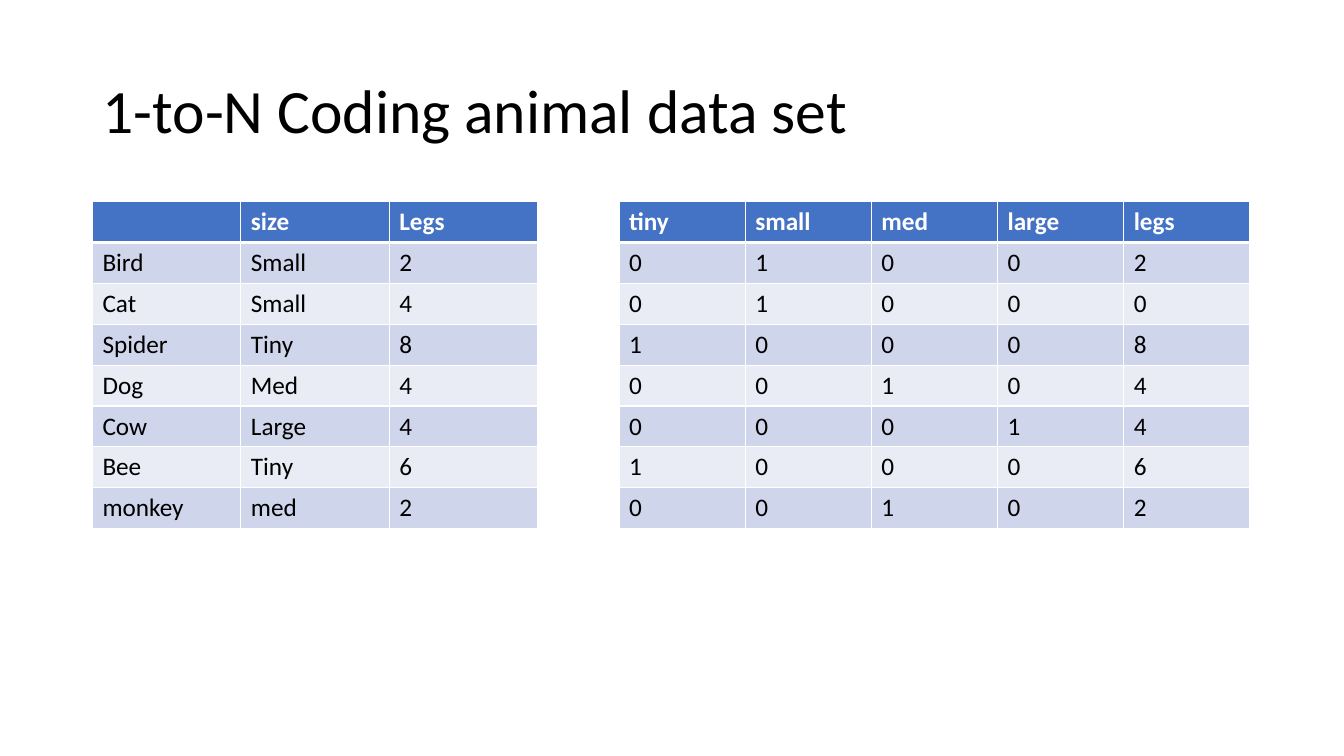
"""Build a slide that shows 1-to-N coding of an animal data set."""
from dataclasses import dataclass

from lxml import etree
from pptx import Presentation
from pptx.dml.color import RGBColor
from pptx.enum.text import MSO_ANCHOR, MSO_AUTO_SIZE, PP_ALIGN
from pptx.oxml.ns import qn
from pptx.util import Cm, Pt

LEFT = PP_ALIGN.LEFT
MIDDLE = MSO_ANCHOR.MIDDLE
NO_AUTOFIT = MSO_AUTO_SIZE.NONE
TITLE_ONLY = 5

ANIMALS = [
    ["", "size", "Legs"],
    ["Bird", "Small", "2"],
    ["Cat", "Small", "4"],
    ["Spider", "Tiny", "8"],
    ["Dog", "Med", "4"],
    ["Cow", "Large", "4"],
    ["Bee", "Tiny", "6"],
    ["monkey", "med", "2"],
]
CODED_ANIMALS = [
    ["tiny", "small", "med", "large", "legs"],
    ["0", "1", "0", "0", "2"],
    ["0", "1", "0", "0", "0"],
    ["1", "0", "0", "0", "8"],
    ["0", "0", "1", "0", "4"],
    ["0", "0", "0", "1", "4"],
    ["1", "0", "0", "0", "6"],
    ["0", "0", "1", "0", "2"],
]


@dataclass(frozen=True)
class Theme:
    font: str = "Calibri"
    title_size: int = 44
    table_size: int = 18
    text: str = "000000"
    header_text: str = "FFFFFF"
    header_fill: str = "4472C4"
    bands: tuple = ("E9EBF5", "CFD5EA")
    border: str = "FFFFFF"
    thin: int = 1
    thick: int = 3


class SlideBuilder:
    def __init__(self, slide, theme):
        self.slide = slide
        self.theme = theme

    def style(self, paragraph, size, color, bold=False):
        font = paragraph.font
        font.name = self.theme.font
        font.size = Pt(size)
        font.bold = bold
        font.color.rgb = RGBColor.from_string(color)

    def title(self, text, left, top, width, height):
        title = self.slide.shapes.title
        title.left, title.top = Cm(left), Cm(top)
        title.width, title.height = Cm(width), Cm(height)
        frame = title.text_frame
        frame.text = text
        frame.auto_size = NO_AUTOFIT
        frame.vertical_anchor = MIDDLE
        paragraph = frame.paragraphs[0]
        paragraph.alignment = LEFT
        paragraph.line_spacing = 0.9
        self.style(paragraph, self.theme.title_size, self.theme.text)

    def borders(self, cell, top, bottom):
        properties = cell._tc.get_or_add_tcPr()
        widths = {"L": self.theme.thin, "R": self.theme.thin, "T": top, "B": bottom}
        for side, width in widths.items():
            line = etree.SubElement(properties, qn(f"a:ln{side}"), w=str(Pt(width)))
            fill = etree.SubElement(line, qn("a:solidFill"))
            etree.SubElement(fill, qn("a:srgbClr"), val=self.theme.border)

    def cell(self, cell, text, row):
        theme = self.theme
        header = row == 0
        self.borders(cell, theme.thick if row == 1 else theme.thin,
                     theme.thick if header else theme.thin)
        cell.fill.solid()
        fill = theme.header_fill if header else theme.bands[row % 2]
        cell.fill.fore_color.rgb = RGBColor.from_string(fill)
        cell.text = text
        self.style(cell.text_frame.paragraphs[0], theme.table_size,
                   theme.header_text if header else theme.text, header)

    def table(self, rows, left, top, column_width, row_height):
        row_count, column_count = len(rows), len(rows[0])
        table = self.slide.shapes.add_table(
            row_count, column_count, Cm(left), Cm(top),
            Cm(column_width * column_count), Cm(row_height * row_count)).table
        for column in table.columns:
            column.width = Cm(column_width)
        for row, values in enumerate(rows):
            table.rows[row].height = Cm(row_height)
            for column, text in enumerate(values):
                self.cell(table.cell(row, column), text, row)


def main():
    presentation = Presentation()
    presentation.slide_width, presentation.slide_height = Cm(33.87), Cm(19.05)
    slide = presentation.slides.add_slide(presentation.slide_layouts[TITLE_ONLY])
    builder = SlideBuilder(slide, Theme())
    builder.title("1-to-N Coding animal data set", 2.33, 1.01, 29.21, 3.68)
    builder.table(ANIMALS, 2.33, 5.08, 3.74, 1.03)
    builder.table(CODED_ANIMALS, 15.6, 5.08, 3.18, 1.03)
    presentation.save("out.pptx")


if __name__ == "__main__":
    main()
